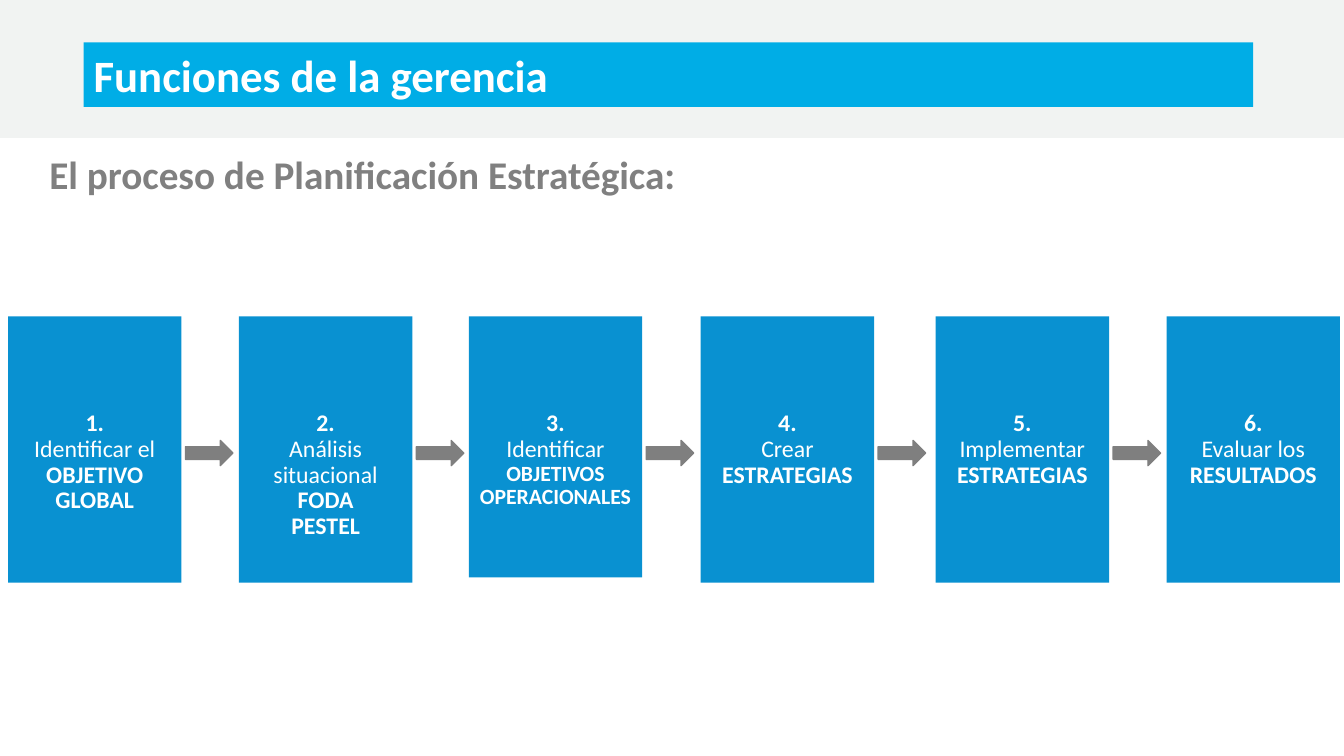
from pptx import Presentation
from pptx.dml.color import RGBColor
from pptx.enum.shapes import MSO_SHAPE
from pptx.enum.text import MSO_ANCHOR, PP_ALIGN
from pptx.util import Inches, Pt

COLORS = {
    "band": "F1F3F2",
    "title": "00ADE6",
    "step": "0991D1",
    "arrow": "7F7F7F",
    "heading": "808080",
    "white": "FFFFFF",
}


class Deck:
    """Style and current slide; lengths are percent of the slide's size."""

    font = "Calibri"

    def __init__(self, width, height):
        self.prs = Presentation()
        self.prs.slide_width, self.prs.slide_height = Inches(width), Inches(height)
        self.slide = self.prs.slides.add_slide(self.prs.slide_layouts[6])

    def area(self, left, top, width, height):
        column, row = self.prs.slide_width / 100, self.prs.slide_height / 100
        return [round(n) for n in (left * column, top * row, width * column, height * row)]

    def shape(self, area, color, kind=MSO_SHAPE.RECTANGLE, outlined=False):
        shape = self.slide.shapes.add_shape(kind, *self.area(*area))
        shape.shadow.inherit = False
        shape.fill.solid()
        shape.fill.fore_color.rgb = RGBColor.from_string(COLORS[color])
        if outlined:
            shape.line.color.rgb = RGBColor.from_string(COLORS[color])
            shape.line.width = Pt(1)
        else:
            shape.line.fill.background()
        return shape

    def textbox(self, area):
        return self.slide.shapes.add_textbox(*self.area(*area))

    def add_text(self, holder, lines, color="white", align=PP_ALIGN.LEFT,
                 spacing=1.0, anchor=MSO_ANCHOR.TOP, insets=(0.1, 0.05)):
        """Each line is (text, size, bold)."""
        frame = holder.text_frame
        frame.word_wrap = True
        frame.vertical_anchor = anchor
        frame.margin_left = frame.margin_right = Inches(insets[0])
        frame.margin_top = Inches(insets[1])
        for index, (text, size, bold) in enumerate(lines):
            paragraph = frame.add_paragraph() if index else frame.paragraphs[0]
            paragraph.alignment = align
            paragraph.line_spacing = spacing
            run = paragraph.add_run()
            run.text = text
            run.font.name = self.font
            run.font.size = Pt(size)
            run.font.bold = bold
            run.font.color.rgb = RGBColor.from_string(COLORS[color])


# Each step: left edge, height, action, emphasised lines, their size
STEPS = [
    (0.6, 35.2, "Identificar el", ["OBJETIVO GLOBAL"], 17),
    (17.78, 35.2, "Análisis situacional", ["FODA", "PESTEL"], 17),
    (34.88, 34.53, "Identificar", ["OBJETIVOS", "OPERACIONALES"], 15.5),
    (52.14, 35.2, "Crear", ["ESTRATEGIAS"], 17),
    (69.62, 35.2, "Implementar", ["ESTRATEGIAS"], 17),
    (86.8, 35.2, "Evaluar los", ["RESULTADOS"], 17),
]
STEP_TOP, STEP_WIDTH = 41.87, 12.9
ARROW_GAP = 0.3


def main():
    deck = Deck(13.33, 7.5)

    # Header band and title
    deck.shape((0, 0, 100, 18.13), "band", outlined=True)
    title = deck.shape((6.23, 5.6, 87.02, 8.53), "title")
    deck.add_text(title, [("Funciones de la gerencia", 32, True)], align=PP_ALIGN.JUSTIFY)

    # Heading
    heading = deck.textbox((2.93, 18.13, 93.55, 10.13))
    deck.add_text(heading, [("El proceso de Planificación Estratégica:", 28, True)],
                  color="heading", spacing=Pt(32), anchor=MSO_ANCHOR.MIDDLE)

    # Process steps, with an arrow after each but the last
    for number, (left, height, action, emphasis, size) in enumerate(STEPS, 1):
        step = deck.shape((left, STEP_TOP, STEP_WIDTH, height), "step")
        lines = [(f"{number}.", 17, True), (action, 17, False)]
        lines += [(text, size, True) for text in emphasis]
        deck.add_text(step, lines, align=PP_ALIGN.CENTER, spacing=0.9, insets=(0.1, 0.94))
        if number < len(STEPS):
            deck.shape((left + STEP_WIDTH + ARROW_GAP, 58.27, 3.53, 3.33), "arrow",
                       MSO_SHAPE.RIGHT_ARROW, outlined=True)

    deck.prs.save("out.pptx")


if __name__ == "__main__":
    main()
